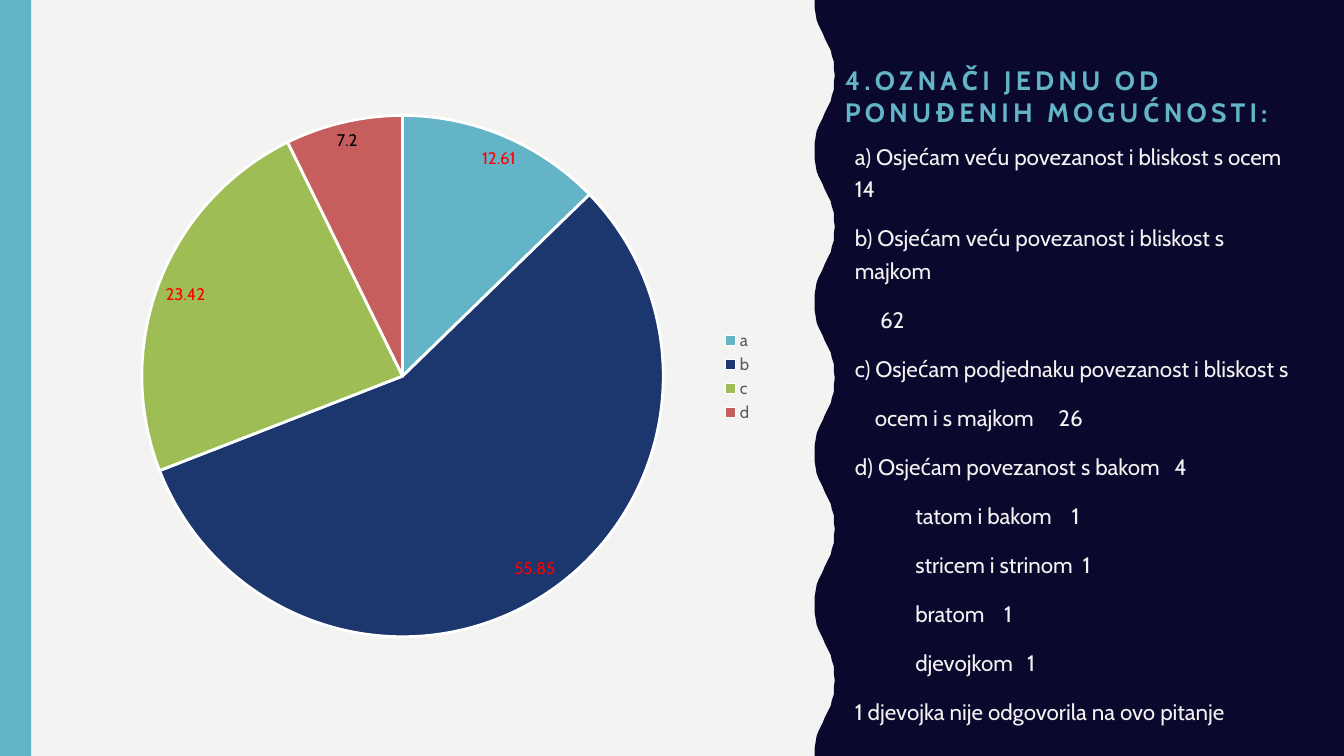
from dataclasses import dataclass

from lxml.etree import SubElement
from pptx import Presentation
from pptx.chart.data import CategoryChartData
from pptx.dml.color import RGBColor
from pptx.enum.chart import XL_CHART_TYPE, XL_LABEL_POSITION, XL_LEGEND_POSITION
from pptx.enum.shapes import MSO_SHAPE
from pptx.enum.text import MSO_ANCHOR, MSO_AUTO_SIZE, PP_ALIGN
from pptx.oxml import parse_xml
from pptx.oxml.ns import nsdecls, qn
from pptx.util import Inches, Pt

COLORS = {
    "paper": "F3F3F2", "navy": "0B082E", "teal": "62B4C6", "blue": "1B376E",
    "green": "9EBE55", "rose": "C65E5E", "red": "FF0000", "black": "000000",
    "gray": "595959", "white": "FFFFFF",
}
FONT = "Cabin"
WIDTH, HEIGHT = 13.33, 7.5

# Right edge of the wave from a crest to the next trough: (distance, x)
HALF_WAVE = [
    (0, 8.28), (0.07, 8.27), (0.14, 8.27), (0.2, 8.25), (0.25, 8.24),
    (0.29, 8.22), (0.33, 8.2), (0.37, 8.18), (0.42, 8.16), (0.46, 8.14),
    (0.5, 8.12), (0.55, 8.1), (0.61, 8.09), (0.67, 8.08), (0.75, 8.08),
]
WAVE_COUNT = 5
WAVE_LENGTH = HEIGHT / WAVE_COUNT


@dataclass
class Slice:
    name: str
    value: float
    color: str


@dataclass
class Line:
    text: str
    tabs: tuple[float, ...] = ()


SLICES = [
    Slice("a", 12.61, "teal"),
    Slice("b", 55.85, "blue"),
    Slice("c", 23.42, "green"),
    Slice("d", 7.2, "rose"),
]
LINES = [
    Line("a) Osjećam veću povezanost i bliskost s ocem 14"),
    Line("b) Osjećam veću povezanost i bliskost s majkom"),
    Line("\t62", (0.25,)),
    Line("c) Osjećam podjednaku povezanost i bliskost s"),
    Line("\tocem i s majkom\t26", (0.2, 2.02)),
    Line("d) Osjećam povezanost s bakom\t4", (3.17,)),
    Line("\ttatom i bakom\t1", (0.6, 2.15)),
    Line("\tstricem i strinom\t1", (0.6, 2.26)),
    Line("\tbratom\t1", (0.6, 1.48)),
    Line("\tdjevojkom\t1", (0.6, 1.71)),
    Line("1 djevojka nije odgovorila na ovo pitanje"),
]


def rgb(color: str) -> RGBColor:
    return RGBColor.from_string(COLORS[color])


def format_font(font, size: float, color: str, bold: bool = False) -> None:
    values = {"name": FONT, "size": Pt(size), "bold": bold}
    for attribute, value in values.items():
        setattr(font, attribute, value)
    font.color.rgb = rgb(color)


def paint(shape, color: str) -> None:
    shape.shadow.inherit = False
    shape.fill.solid()
    shape.fill.fore_color.rgb = rgb(color)
    shape.line.fill.background()


def place(shape, left: float, top: float, width: float, height: float) -> None:
    box = {"left": left, "top": top, "width": width, "height": height}
    for attribute, value in box.items():
        setattr(shape, attribute, Inches(value))


def add_wave_panel(slide) -> None:
    points = [(WIDTH, 0), (WIDTH, HEIGHT)]
    for index in reversed(range(WAVE_COUNT)):
        crest = (index + 0.5) * WAVE_LENGTH
        points += [(x, crest + distance) for distance, x in reversed(HALF_WAVE)]
        points += [(x, crest - distance) for distance, x in HALF_WAVE[1:]]
    builder = slide.shapes.build_freeform(Inches(points[0][0]), Inches(points[0][1]))
    builder.add_line_segments([(Inches(x), Inches(y)) for x, y in points[1:]])
    paint(builder.convert_to_shape(), "navy")


def add_side_bar(slide) -> None:
    bar = slide.shapes.add_shape(
        MSO_SHAPE.RECTANGLE, 0, 0, Inches(0.31), Inches(HEIGHT))
    paint(bar, "teal")


def format_title(slide) -> None:
    title = slide.shapes.title
    # Bring the title in front of the panel
    title._element.getparent().append(title._element)
    place(title, 8.28, 0.5, 4.98, 0.82)
    frame = title.text_frame
    frame.text = "4.OZNAČI JEDNU OD PONUĐENIH MOGUĆNOSTI:"
    settings = {"word_wrap": True, "auto_size": MSO_AUTO_SIZE.NONE,
                "vertical_anchor": MSO_ANCHOR.BOTTOM}
    for attribute, value in settings.items():
        setattr(frame, attribute, value)
    paragraph = frame.paragraphs[0]
    paragraph.alignment = PP_ALIGN.LEFT
    run = paragraph.runs[0]
    format_font(run.font, 19, "teal", bold=True)
    run.font._element.set("spc", "300")


def add_pie(slide) -> None:
    data = CategoryChartData()
    data.categories = [part.name for part in SLICES]
    data.add_series("Series 1", [part.value for part in SLICES])
    chart = slide.shapes.add_chart(
        XL_CHART_TYPE.PIE, Inches(0.84), Inches(1.01),
        Inches(6.73), Inches(5.45), data).chart
    chart.has_title = False
    format_font(chart.font, 10, "black")

    # Legend
    chart.has_legend = True
    chart.legend.position = XL_LEGEND_POSITION.RIGHT
    chart.legend.include_in_layout = False
    format_font(chart.legend.font, 12, "gray")

    # Slices and their values
    plot = chart.plots[0]
    plot.vary_by_categories = True
    series = plot.series[0]
    labels = series.data_labels
    labels.show_value = True
    labels.position = XL_LABEL_POSITION.BEST_FIT
    format_font(labels.font, 12, "red")
    for index, part in enumerate(SLICES):
        point = series.points[index]
        point.format.fill.solid()
        point.format.fill.fore_color.rgb = rgb(part.color)
        point.format.line.color.rgb = rgb("white")
        point.format.line.width = Pt(2)
    last_label = series.points[len(SLICES) - 1].data_label
    format_font(last_label.font, 12, "black")
    last_label.position = XL_LABEL_POSITION.BEST_FIT

    # Fixed plot area, as fractions of the chart
    plot_area = plot._element.getparent()
    for layout in plot_area.findall(qn("c:layout")):
        plot_area.remove(layout)
    area = {"x": 0.084, "y": 0.025, "w": 0.769, "h": 0.949}
    sizes = "".join(f'<c:{key} val="{value}"/>' for key, value in area.items())
    plot_area.insert(0, parse_xml(
        f'<c:layout {nsdecls("c")}><c:manualLayout><c:layoutTarget val="inner"/>'
        f'<c:xMode val="edge"/><c:yMode val="edge"/>{sizes}'
        "</c:manualLayout></c:layout>"))


def add_answers(slide) -> None:
    box = slide.shapes.add_textbox(
        Inches(8.38), Inches(1.32), Inches(4.57), Inches(5.97))
    frame = box.text_frame
    frame.word_wrap = True
    for index, line in enumerate(LINES):
        paragraph = frame.add_paragraph() if index else frame.paragraphs[0]
        paragraph.line_spacing = 1.2
        paragraph.space_before = Pt(12)
        run = paragraph.add_run()
        run.text = line.text
        format_font(run.font, 16, "paper")
        if line.tabs:
            tab_list = SubElement(paragraph._p.get_or_add_pPr(), qn("a:tabLst"))
            for position in line.tabs:
                SubElement(tab_list, qn("a:tab"), pos=str(Inches(position)), algn="l")


def main() -> None:
    presentation = Presentation()
    presentation.slide_width = Inches(WIDTH)
    presentation.slide_height = Inches(HEIGHT)
    slide = presentation.slides.add_slide(presentation.slide_layouts[5])
    slide.background.fill.solid()
    slide.background.fill.fore_color.rgb = rgb("paper")
    add_wave_panel(slide)
    add_side_bar(slide)
    format_title(slide)
    add_pie(slide)
    add_answers(slide)
    presentation.save("out.pptx")


if __name__ == "__main__":
    main()
